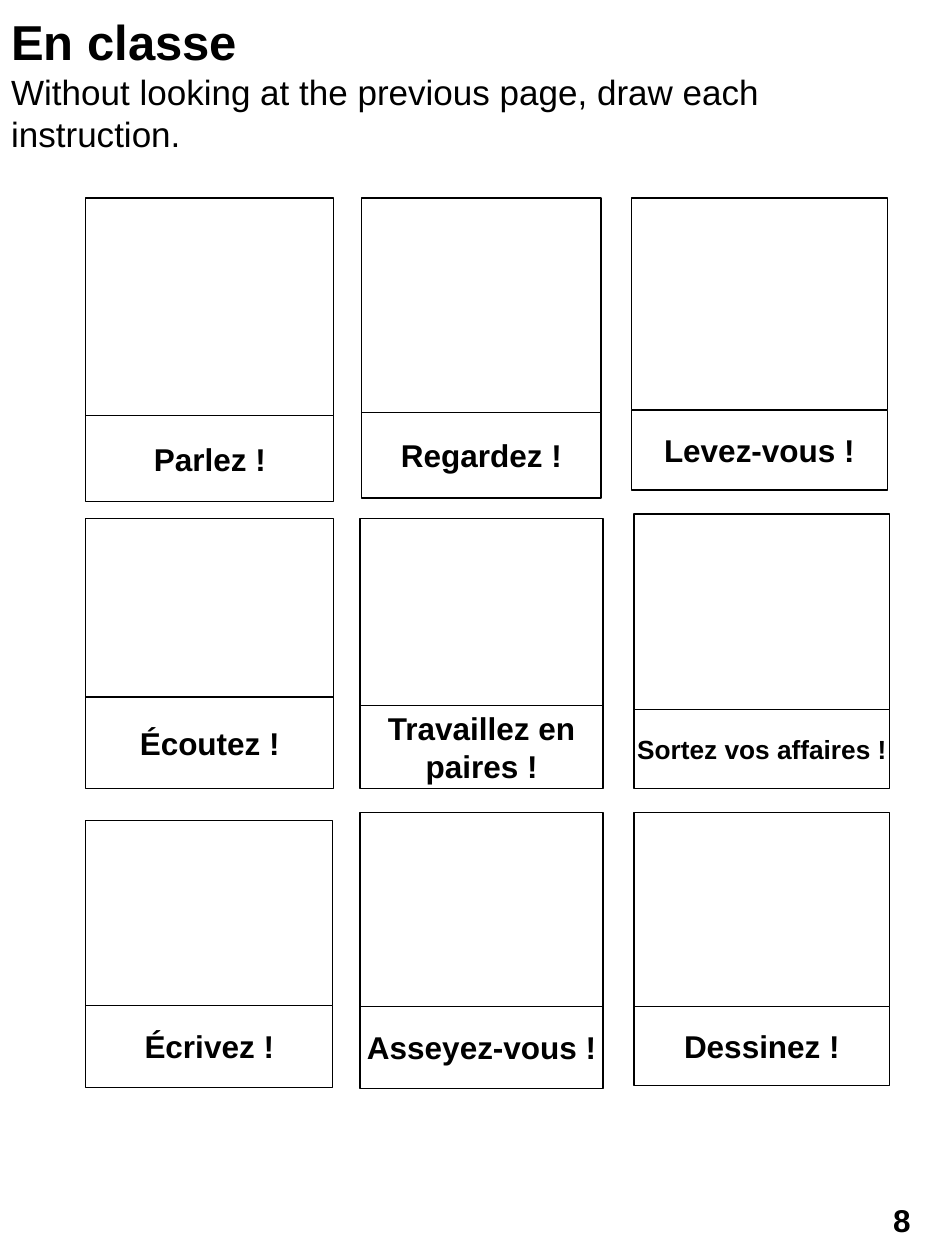
from pptx import Presentation
from pptx.dml.color import RGBColor
from pptx.enum.shapes import MSO_SHAPE as Shape
from pptx.enum.text import MSO_ANCHOR as Anchor, MSO_AUTO_SIZE as Fit, PP_ALIGN as Align
from pptx.util import Cm, Pt

COLORS = {"ink": "000000", "paper": "FFFFFF"}

# label, left, width, frame top, frame height, label top, label height (cm)
CARDS = [
    ("Parlez !", 1.73, 5.0, 3.99, 4.6, 8.38, 1.73),
    ("Regardez !", 7.29, 4.83, 3.99, 4.6, 8.31, 1.73),
    ("Levez-vous !", 12.73, 5.16, 3.99, 4.27, 8.28, 1.6),
    ("Écoutez !", 1.73, 5.0, 10.46, 4.93, 14.05, 1.85),
    ("Travaillez en paires !", 7.26, 4.9, 10.46, 4.47, 14.22, 1.68),
    ("Sortez vos affaires !", 12.78, 5.16, 10.36, 4.27, 14.3, 1.6),
    ("Écrivez !", 1.73, 4.98, 16.54, 4.37, 20.27, 1.65),
    ("Asseyez-vous !", 7.26, 4.9, 16.38, 4.37, 20.29, 1.65),
    ("Dessinez !", 12.78, 5.16, 16.38, 4.27, 20.29, 1.6),
]
SMALL = {"Sortez vos affaires !": 15}


def color(name):
    return RGBColor.from_string(COLORS[name])


def write(para, text, size=18, bold=True, align=Align.CENTER, after=0):
    para.alignment = align
    para.space_before = Pt(0)
    para.space_after = Pt(after)
    run = para.add_run()
    run.text = text
    font = run.font
    font.name, font.size, font.bold = "Arial", Pt(size), bold
    font.color.rgb = color("ink")


def add_box(slide, left, top, width, height):
    box = slide.shapes.add_shape(
        Shape.RECTANGLE, Cm(left), Cm(top), Cm(width), Cm(height))
    box.shadow.inherit = False
    box.fill.solid()
    box.fill.fore_color.rgb = color("paper")
    box.line.color.rgb = color("ink")
    box.line.width = Pt(0.75)
    return box


def add_card(slide, text, left, width, top, height, label_top, label_height):
    """Add an empty drawing frame with its label over the lower edge."""
    add_box(slide, left, top, width, height)
    frame = add_box(slide, left, label_top, width, label_height).text_frame
    frame.margin_left = frame.margin_right = 0
    frame.margin_top = frame.margin_bottom = 0
    frame.vertical_anchor = Anchor.MIDDLE
    frame.word_wrap = True
    write(frame.paragraphs[0], text, size=SMALL.get(text, 18), after=7.5)


def set_title(slide, head, task):
    title = slide.shapes.title
    title.left, title.top = Cm(-0.03), Cm(0.08)
    title.width, title.height = Cm(18.85), Cm(3.18)
    frame = title.text_frame
    frame.auto_size = Fit.NONE
    frame.word_wrap = True
    frame.vertical_anchor = Anchor.MIDDLE
    para = frame.paragraphs[0]
    write(para, head, size=28, align=Align.LEFT)
    para.add_line_break()
    write(para, task, size=20, bold=False, align=Align.LEFT)


def add_page(slide, number):
    page = slide.shapes.add_shape(
        Shape.ROUNDED_RECTANGLE, Cm(17.48), Cm(24), Cm(1.4), Cm(1.19))
    page.shadow.inherit = False
    page.fill.background()
    page.line.fill.background()
    page.text_frame.vertical_anchor = Anchor.MIDDLE
    write(page.text_frame.paragraphs[0], number)


def main():
    deck = Presentation()
    deck.slide_width, deck.slide_height = Cm(19.05), Cm(25.4)
    slide = deck.slides.add_slide(deck.slide_layouts.get_by_name("Title Only"))
    set_title(slide, "En classe",
              "Without looking at the previous page, draw each instruction.")
    for card in CARDS:
        add_card(slide, *card)
    add_page(slide, "8")
    deck.save("out.pptx")


if __name__ == "__main__":
    main()
